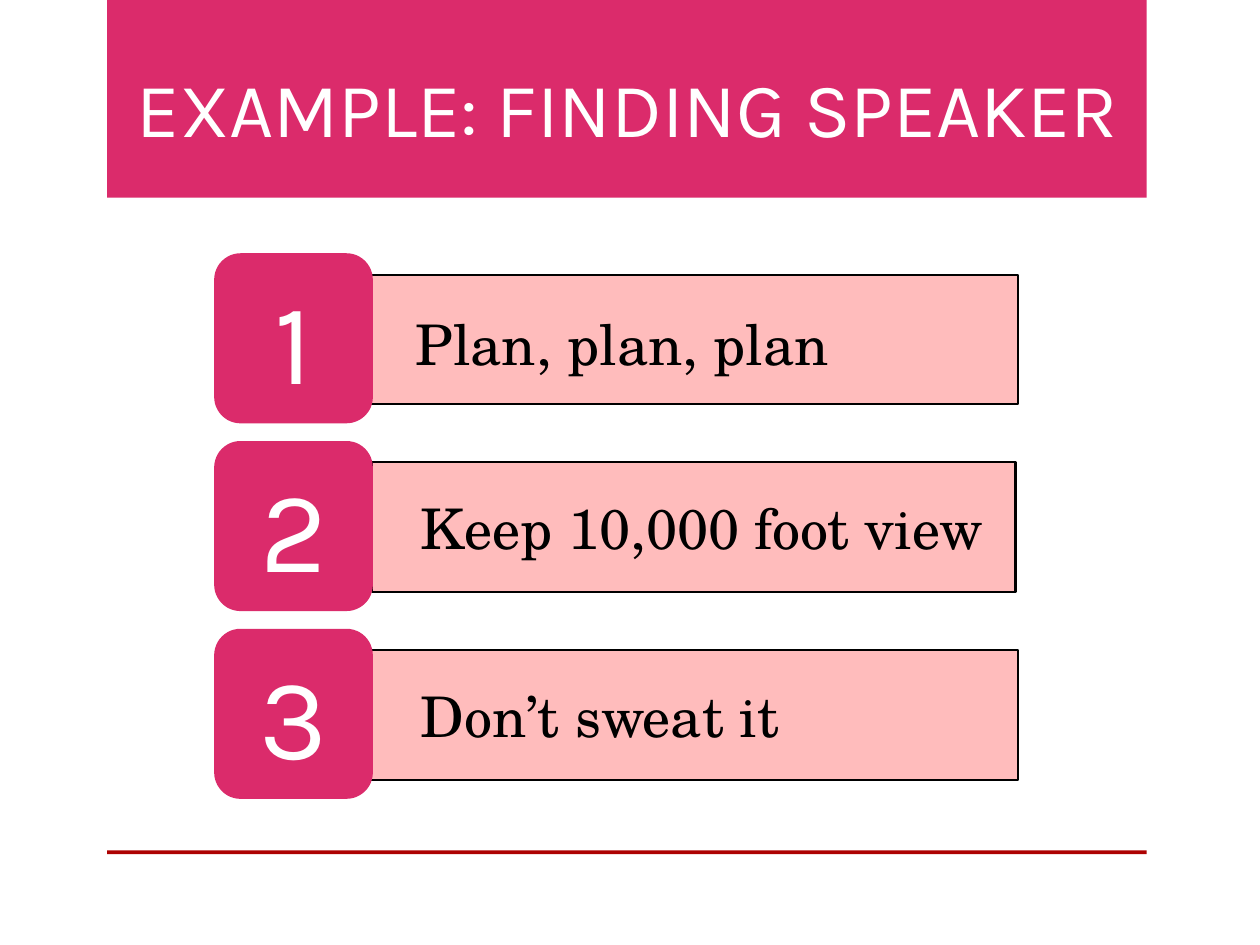
from pptx import Presentation
from pptx.dml.color import RGBColor
from pptx.enum.shapes import MSO_SHAPE
from pptx.enum.text import MSO_ANCHOR, PP_ALIGN
from pptx.util import Inches, Pt

PINK, PALE, RED = "DB2B6B", "FFBCBC", "AD0101"
WHITE, BLACK = "FFFFFF", "000000"
SANS, SERIF = "Karla", "TeX Gyre Schola"


def color(value):
    return RGBColor.from_string(value)


def add_block(s, kind, left, top, width, height, fill, line=None):
    sp = s.shapes.add_shape(kind, Inches(left), Inches(top),
                            Inches(width), Inches(height))
    sp.shadow.inherit = False
    sp.fill.solid()
    sp.fill.fore_color.rgb = color(fill)
    if line:
        sp.line.color.rgb = color(line)
        sp.line.width = Pt(1.25)
    else:
        sp.line.fill.background()
    return sp


def set_text(sp, text, size, font, fill, align=PP_ALIGN.CENTER,
             anchor=MSO_ANCHOR.MIDDLE, left=0.1, top=0.05):
    tf = sp.text_frame
    tf.word_wrap = True
    tf.vertical_anchor = anchor
    tf.margin_left, tf.margin_top = Inches(left), Inches(top)
    p = tf.paragraphs[0]
    p.alignment = align
    r = p.add_run()
    r.text = text
    r.font.size = Pt(size)
    r.font.name = font
    r.font.color.rgb = color(fill)


def add_step(s, number, text, left, width, indent, inset_top):
    top = 2.01 + 1.49 * (number - 1)
    bar = add_block(s, MSO_SHAPE.RECTANGLE, left, top + 0.17, width, 1.03,
                    PALE, BLACK)
    set_text(bar, text, 32, SERIF, BLACK, align=PP_ALIGN.LEFT,
             left=indent, top=inset_top)
    badge = add_block(s, MSO_SHAPE.ROUNDED_RECTANGLE, 1.7, top, 1.26, 1.35, PINK)
    set_text(badge, str(number), 66, SANS, WHITE)


def main():
    prs = Presentation()
    prs.slide_width, prs.slide_height = Inches(10), Inches(7.5)
    s = prs.slides.add_slide(prs.slide_layouts[6])

    # Header band and footer rule
    add_block(s, MSO_SHAPE.RECTANGLE, 0.85, 0, 8.25, 1.57, PINK)
    add_block(s, MSO_SHAPE.RECTANGLE, 0.85, 6.75, 8.25, 0.03, RED)

    # Title
    title = s.shapes.add_textbox(Inches(0.87), Inches(0.05),
                                 Inches(8.23), Inches(1.21))
    set_text(title, "EXAMPLE: FINDING SPEAKER", 44, SANS, WHITE,
             anchor=MSO_ANCHOR.BOTTOM)

    # Numbered steps: text, bar left and width, text indent, top inset
    steps = [
        ("Plan, plan, plan", 2.94, 5.14, 0.36, 0.1),
        ("Keep 10,000 foot view", 2.95, 5.11, 0.39, 0.05),
        ("Don’t sweat it", 2.94, 5.14, 0.4, 0.05),
    ]
    for number, step in enumerate(steps, 1):
        add_step(s, number, *step)

    prs.save("out.pptx")


if __name__ == "__main__":
    main()
